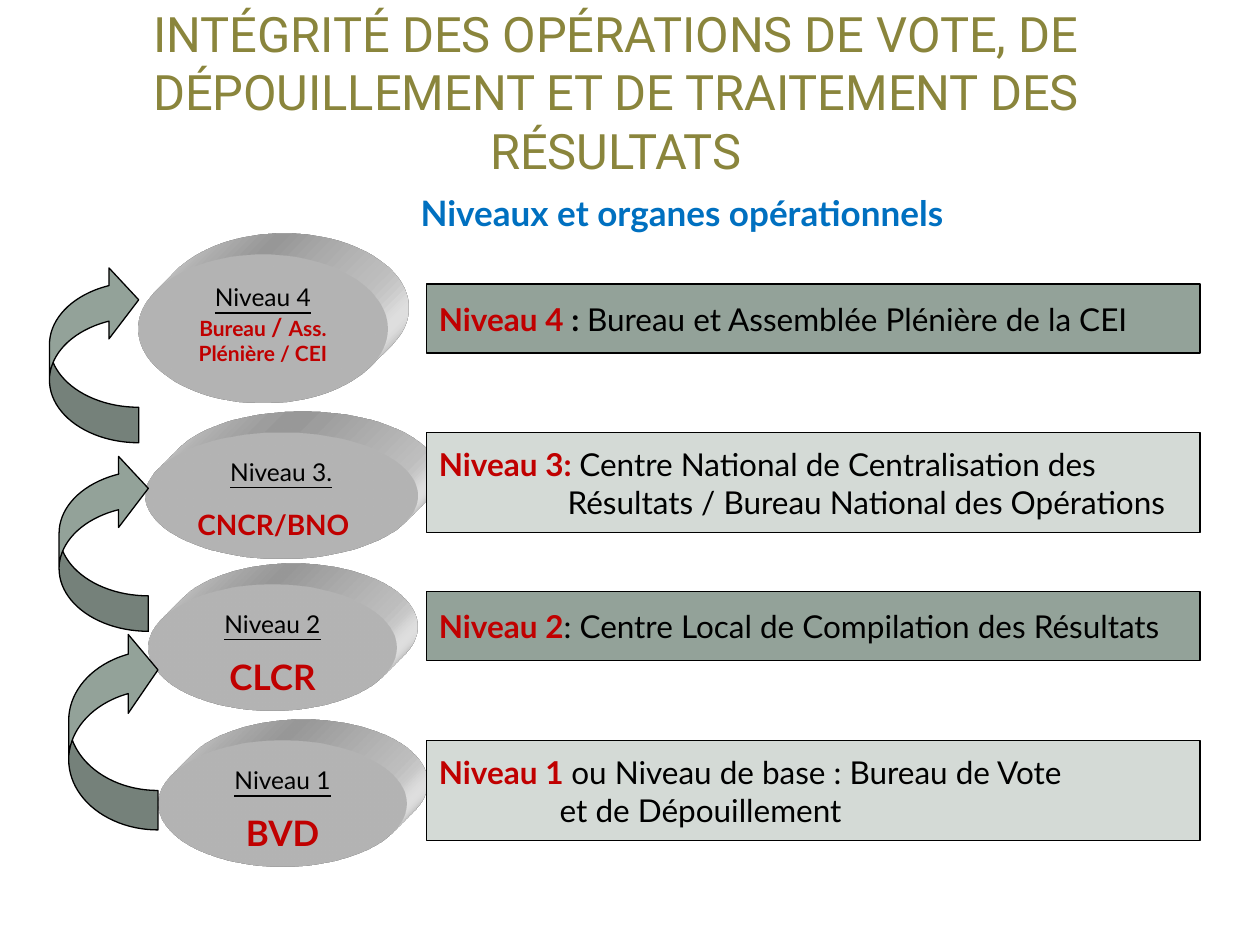
from lxml import etree
from pptx import Presentation
from pptx.dml.color import RGBColor
from pptx.enum.shapes import MSO_SHAPE
from pptx.enum.text import MSO_ANCHOR, MSO_AUTO_SIZE, PP_ALIGN
from pptx.oxml.ns import qn
from pptx.util import Pt

CENTER, LEFT = PP_ALIGN.CENTER, PP_ALIGN.LEFT
TOP, MIDDLE = MSO_ANCHOR.TOP, MSO_ANCHOR.MIDDLE
OVAL, RECTANGLE = MSO_SHAPE.OVAL, MSO_SHAPE.RECTANGLE
ROUNDED, CURVED_ARROW = MSO_SHAPE.ROUNDED_RECTANGLE, MSO_SHAPE.CURVED_DOWN_ARROW

WHITE, BLACK, RED, BLUE, OLIVE = "FFFFFF", "000000", "C00000", "0070C0", "8A853C"
SAGE, PALE_SAGE = "93A299", "D4DAD6"
DEPTH = 33.87
BOX_LEFT, BOX_WIDTH = 243.75, 442

# White panels behind the content: kind, frame
PANELS = [(ROUNDED, (7.2, 7.9, 705.6, 525)), (RECTANGLE, (21.6, 21.6, 676.8, 104.4)),
          (RECTANGLE, (29.5, 29.5, 660.2, 87.8))]

# Each disc: frame, label, gap below the label, alignment of the organ, organ runs
DISCS = [
    ((79, 145.25, 142.5, 85), "Niveau 4", 0, CENTER,
     [("Bureau ", 12), ("/ ", 14), ("Ass. Plénière / CEI", 12)]),
    ((83, 247, 155.5, 72), "Niveau 3.", 12, LEFT, [("CNCR/BNO", 16)]),
    ((90.5, 423.25, 142, 72), "Niveau 1", 9.6, CENTER, [("BVD", 20)]),
    ((84.75, 334, 142, 72), "Niveau 2", 9.6, CENTER, [("CLCR", 20)]),
]

# Each box: top, height, fill, runs (text, colour, bold), second line and its indent
BOXES = [
    (162.25, 39.5, SAGE, [("Niveau 4 ", RED, True), (": ", BLACK, True),
                          ("Bureau et Assemblée Plénière de la CEI", BLACK, False)], "", 0),
    (247.25, 57, PALE_SAGE, [("Niveau 3: ", RED, True),
                             ("Centre National de Centralisation des", BLACK, False)],
     "Résultats / Bureau National des Opérations", 73.5),
    (338, 39.5, SAGE, [("Niveau 2", RED, True),
                       (": Centre Local de Compilation des Résultats", BLACK, False)], "", 0),
    (423.25, 57, PALE_SAGE, [("Niveau 1 ", RED, True),
                             ("ou Niveau de base : Bureau de Vote", BLACK, False)],
     "et de Dépouillement", 69),
]

# Frames before the quarter turn, and the band width
ARROWS = [((2.75, 176.5, 102, 51), 0.398), ((8.25, 284.25, 102, 51), 0.398),
          ((7.75, 391.75, 114, 51), 0.442)]


def color(value):
    return RGBColor.from_string(value)


def points(values):
    return [Pt(value) for value in values]


def add_run(paragraph, text, size, text_color, bold=False, underline=False, font="Lato"):
    run = paragraph.add_run()
    run.text = text
    run.font.name = font
    run.font.size = Pt(size)
    run.font.color.rgb = color(text_color)
    run.font.bold = bold
    run.font.underline = underline


def set_indent(paragraph, margin):
    properties = paragraph._p.get_or_add_pPr()
    properties.set("marL", str(Pt(margin)))
    properties.set("indent", "0")
    return properties


def add_shape(slide, kind, frame, fill, line=None):
    shape = slide.shapes.add_shape(kind, *points(frame))
    shape.shadow.inherit = False
    shape.fill.solid()
    shape.fill.fore_color.rgb = color(fill)
    if line:
        shape.line.color.rgb = color(line)
        shape.line.width = Pt(0.75)
    else:
        shape.line.fill.background()
    return shape


def add_panels(slide):
    """Lay the white panels behind the placeholders."""
    for position, (kind, frame) in enumerate(PANELS):
        panel = add_shape(slide, kind, frame, WHITE)
        if kind == ROUNDED:
            panel.adjustments[0] = 0.017
        slide.shapes._spTree.insert(2 + position, panel._element)


def fill_placeholder(placeholder, frame, anchor):
    """Place the placeholder and return its first paragraph, centred."""
    placeholder.left, placeholder.top, placeholder.width, placeholder.height = points(frame)
    text_frame = placeholder.text_frame
    text_frame.auto_size = MSO_AUTO_SIZE.NONE
    text_frame.vertical_anchor = anchor
    paragraph = text_frame.paragraphs[0]
    paragraph.alignment = CENTER
    return paragraph


def extrude(shape):
    """Give the shape depth towards the top right."""
    properties = shape._element.spPr
    scene = etree.SubElement(properties, qn("a:scene3d"))
    etree.SubElement(scene, qn("a:camera"), prst="legacyObliqueTopRight")
    etree.SubElement(scene, qn("a:lightRig"), rig="legacyFlat3", dir="b")
    solid = etree.SubElement(properties, qn("a:sp3d"), extrusionH=str(Pt(DEPTH)),
                             prstMaterial="legacyMatte")
    for side in ("a:bevelT", "a:bevelB"):
        etree.SubElement(solid, qn(side), w="13500", h="13500", prst="angle")
    extrusion_color = etree.SubElement(solid, qn("a:extrusionClr"))
    etree.SubElement(extrusion_color, qn("a:srgbClr"), val=WHITE)


def add_disc(slide, frame, label, gap, alignment, organ):
    disc = add_shape(slide, OVAL, frame, WHITE)
    extrude(disc)
    text_frame = disc.text_frame
    text_frame.vertical_anchor = TOP
    paragraph = text_frame.paragraphs[0]
    paragraph.alignment = CENTER
    add_run(paragraph, label, 14, BLACK, underline=True)
    paragraph = text_frame.add_paragraph()
    paragraph.alignment = alignment
    paragraph.space_before = Pt(gap)
    for text, size in organ:
        add_run(paragraph, text, size, RED, bold=True)


def add_arrow(slide, frame, width):
    arrow = add_shape(slide, CURVED_ARROW, frame, SAGE, BLACK)
    arrow.rotation = 270
    for index, value in enumerate((width, 2 * width, 0.333)):
        arrow.adjustments[index] = value


def add_box(slide, top, height, fill, runs, second_line, indent):
    frame = (BOX_LEFT, top, BOX_WIDTH, height)
    text_frame = add_shape(slide, RECTANGLE, frame, fill, BLACK).text_frame
    text_frame.vertical_anchor = MIDDLE
    paragraph = text_frame.paragraphs[0]
    paragraph.alignment = LEFT
    for text, text_color, bold in runs:
        add_run(paragraph, text, 18, text_color, bold)
    if second_line:
        paragraph = text_frame.add_paragraph()
        paragraph.alignment = LEFT
        set_indent(paragraph, indent)
        add_run(paragraph, second_line, 18, BLACK)


def main():
    presentation = Presentation()
    presentation.slide_width, presentation.slide_height = Pt(720), Pt(540)
    slide = presentation.slides.add_slide(presentation.slide_layouts[1])
    add_panels(slide)

    title = fill_placeholder(slide.shapes.title, (20, 21.75, 664, 61), MIDDLE)
    add_run(title, "INTÉGRITÉ DES OPÉRATIONS DE VOTE, DE DÉPOUILLEMENT "
            "ET DE TRAITEMENT DES RÉSULTATS", 27.9, OLIVE, font="Roboto")

    heading = fill_placeholder(slide.placeholders[1], (36.75, 106, 648, 414), TOP)
    heading.space_before = Pt(0)
    etree.SubElement(set_indent(heading, 58), qn("a:buNone"))
    add_run(heading, "Niveaux et organes opérationnels", 20, BLUE, bold=True)

    for disc in DISCS:
        add_disc(slide, *disc)
    for arrow in ARROWS:
        add_arrow(slide, *arrow)
    for box in BOXES:
        add_box(slide, *box)
    presentation.save("out.pptx")


if __name__ == "__main__":
    main()
